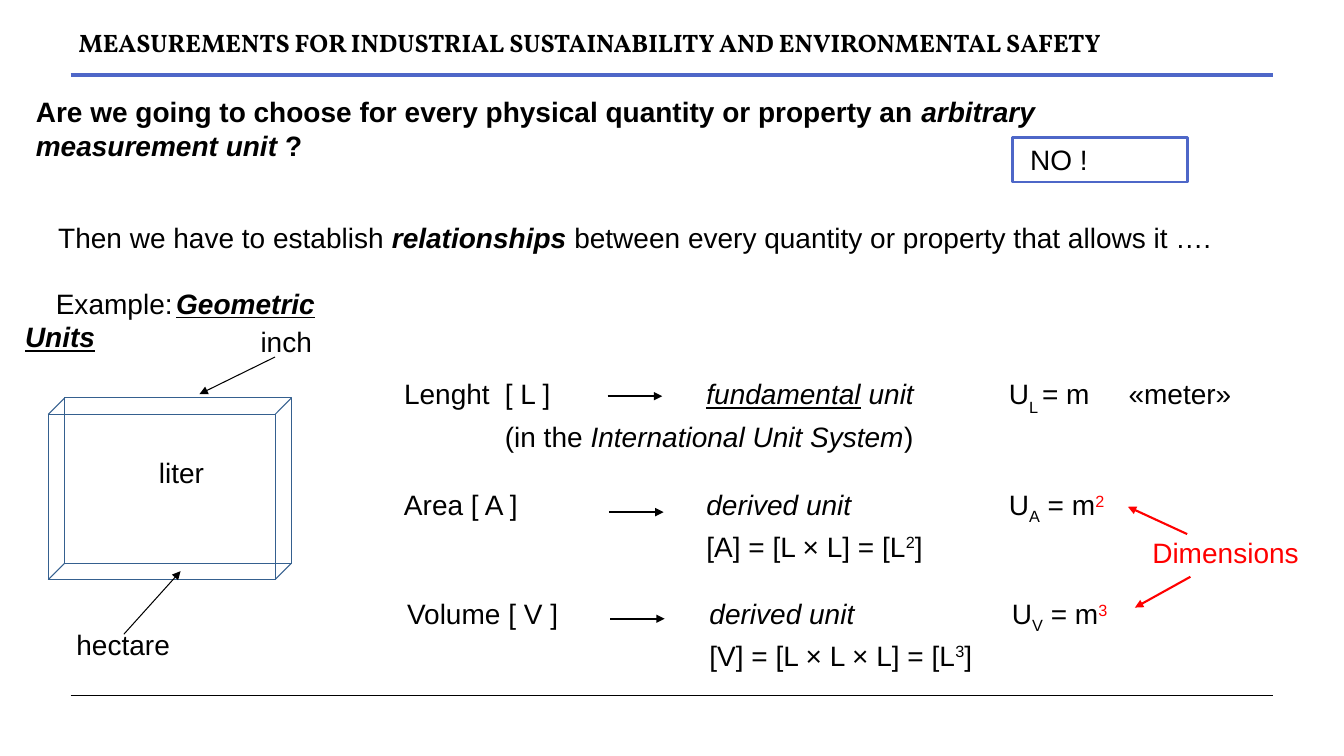
from dataclasses import dataclass

from lxml import etree
from pptx import Presentation
from pptx import util as u
from pptx.dml.color import RGBColor
from pptx.enum import shapes, text
from pptx.oxml import ns


@dataclass(frozen=True)
class Theme:
    ink: str = "000000"
    accent: str = "4E67C8"
    alert: str = "FF0000"
    cube: str = "35608F"
    body_font: str = "Arial"
    title_font: str = "Vollkorn"
    body_size: int = 20
    title_size: int = 18


THEME = Theme()
BOLD = {"bold": True}
ITALIC = {"italic": True}
EMPHASIS = {"bold": True, "italic": True}
HEADING = {**EMPHASIS, "underline": True}
SUB = {"baseline": -25}
SUPER = {"baseline": 30}
RED = {"color": THEME.alert}
POWER = {**SUPER, **RED}


def add_span(para, content, style):
    span = para.add_run()
    span.text = content
    values = {"name": THEME.body_font, "size": u.Pt(THEME.body_size), **style}
    color = values.pop("color", THEME.ink)
    baseline = values.pop("baseline", 0)
    for name, value in values.items():
        setattr(span.font, name, value)
    span.font.color.rgb = RGBColor.from_string(color)
    if baseline:
        span._r.get_or_add_rPr().set("baseline", str(baseline * 1000))


def fill_text(frame, lines, tabs=(), indent=0, spacing=None):
    for index, spans in enumerate(lines):
        para = frame.paragraphs[0] if index == 0 else frame.add_paragraph()
        para.alignment = text.PP_ALIGN.LEFT
        if spacing:
            para.line_spacing = spacing
        props = para._p.get_or_add_pPr()
        if indent and index == 0:
            props.set("marL", "0")
            props.set("indent", str(u.Pt(indent)))
        if tabs:
            stops = etree.SubElement(props, ns.qn("a:tabLst"))
            for position in tabs:
                etree.SubElement(stops, ns.qn("a:tab"), pos=str(u.Pt(position)), algn="l")
        for content, style in spans:
            add_span(para, content, style)


def add_text(page, area, lines, anchor=text.MSO_ANCHOR.TOP, **layout):
    box = page.shapes.add_textbox(*map(u.Pt, area))
    frame = box.text_frame
    frame.word_wrap = True
    frame.auto_size = text.MSO_AUTO_SIZE.SHAPE_TO_FIT_TEXT
    frame.vertical_anchor = anchor
    fill_text(frame, lines, **layout)


def add_frame(page, area, color, width, label="", left=7.2, top=3.6):
    box = page.shapes.add_shape(shapes.MSO_SHAPE.RECTANGLE, *map(u.Pt, area))
    box.shadow.inherit = False
    box.fill.background()
    box.line.color.rgb = RGBColor.from_string(color)
    box.line.width = u.Pt(width)
    if label:
        frame = box.text_frame
        frame.vertical_anchor = text.MSO_ANCHOR.TOP
        frame.margin_left, frame.margin_top = u.Pt(left), u.Pt(top)
        fill_text(frame, [[(label, {})]])


def add_line(page, start, end, color, width, arrow=False):
    line = page.shapes.add_connector(
        shapes.MSO_CONNECTOR.STRAIGHT, *map(u.Pt, (*start, *end)))
    line.line.color.rgb = RGBColor.from_string(color)
    line.line.width = u.Pt(width)
    if arrow:
        etree.SubElement(line.line._get_or_add_ln(), ns.qn("a:tailEnd"), type="triangle")
    etree.SubElement(line._element.spPr, ns.qn("a:effectLst"))


def add_cube(page, left, top, width, height, depth):
    add_frame(page, (left + depth, top - depth, width, height), THEME.cube, 0.75)
    add_frame(page, (left, top, width, height), THEME.cube, 0.75, "liter", 79, 29.5)
    for x in (left, left + width):
        for y in (top, top + height):
            add_line(page, (x, y), (x + depth, y - depth), THEME.cube, 0.75)


def add_quantity(page, left, top, width, lines, tabs=(216, 432), **layout):
    add_text(page, (left, top, width, 59), lines, tabs=tabs, spacing=1.1, **layout)


def derived(name, symbol, power, product):
    return [
        [(f"{name} [ {symbol} ]\t", {}), ("derived unit\t", ITALIC), ("U", {}),
         (symbol, SUB), (" = m", {}), (power, POWER)],
        [(f"\t[{symbol}] = [{product}] = [L", {}), (power, SUPER), ("]", {})],
    ]


def main():
    deck = Presentation()
    deck.slide_width, deck.slide_height = u.Pt(960), u.Pt(540)
    page = deck.slides.add_slide(deck.slide_layouts[6])

    for y, color, width in ((53.5, THEME.accent, 3), (496.5, THEME.ink, 0.5)):
        add_line(page, (50.5, y), (909.5, y), color, width)
    title = {**BOLD, "name": THEME.title_font, "size": u.Pt(THEME.title_size)}
    add_text(page, (49, 16, 862, 29), [[(
        "MEASUREMENTS FOR INDUSTRIAL SUSTAINABILITY AND ENVIRONMENTAL SAFETY", title)]])
    add_text(page, (18.5, 64, 837, 56), [[
        ("Are we going to choose for every physical quantity or property an ", BOLD),
        ("arbitrary measurement unit", EMPHASIS), (" ?", BOLD)]])
    add_frame(page, (723, 98.5, 125.5, 31.5), THEME.accent, 2, "NO !", 12.8)
    add_text(page, (34.5, 154, 850, 31.5), [[
        ("Then we have to establish ", {}), ("relationships ", EMPHASIS),
        ("between every quantity or property that allows it ….", {})]])
    add_text(page, (10.8, 201, 474, 56), [
        [("Example:\t", {}), ("Geometric", HEADING)], [("Units", HEADING)]],
        tabs=(310,), indent=22)

    add_cube(page, 34.5, 296, 162, 118, 11.75)
    for label, area, start, end in (
        ("inch", (179, 228, 60, 31.5), (196.5, 255), (142.5, 281.5)),
        ("hectare", (47.5, 445, 125, 31.5), (88.5, 453), (129, 408)),
    ):
        add_line(page, start, end, THEME.ink, 0.75, arrow=True)
        add_text(page, area, [[(label, {})]])

    add_quantity(page, 281.5, 265.7, 635, [
        [("Lenght\t[ L ]\t", {}), ("fundamental", {**ITALIC, "underline": True}),
         (" unit\t", ITALIC), ("U", {}), ("L ", {"baseline": -30}), ("= m\t«meter»", {})],
        [("\t(in the ", {}), ("International Unit System", ITALIC), (")", {})]],
        tabs=(72, 216, 432, 517.5), anchor=text.MSO_ANCHOR.MIDDLE)
    add_quantity(page, 281.5, 342, 593, derived("Area", "A", "2", "L × L"))
    add_quantity(page, 283.7, 419.8, 604, derived("Volume", "V", "3", "L × L × L"))
    for x, y in ((434, 283), (435, 365.8), (435.8, 442)):
        add_line(page, (x, y), (x + 39, y), THEME.ink, 1.5, arrow=True)

    add_text(page, (816, 378.7, 124, 31.5), [[("Dimensions", RED)]])
    for start, end in (((848, 381.5), (805.7, 362)), ((850.3, 412), (810.7, 434))):
        add_line(page, start, end, THEME.alert, 1.5, arrow=True)

    deck.save("out.pptx")


if __name__ == "__main__":
    main()
